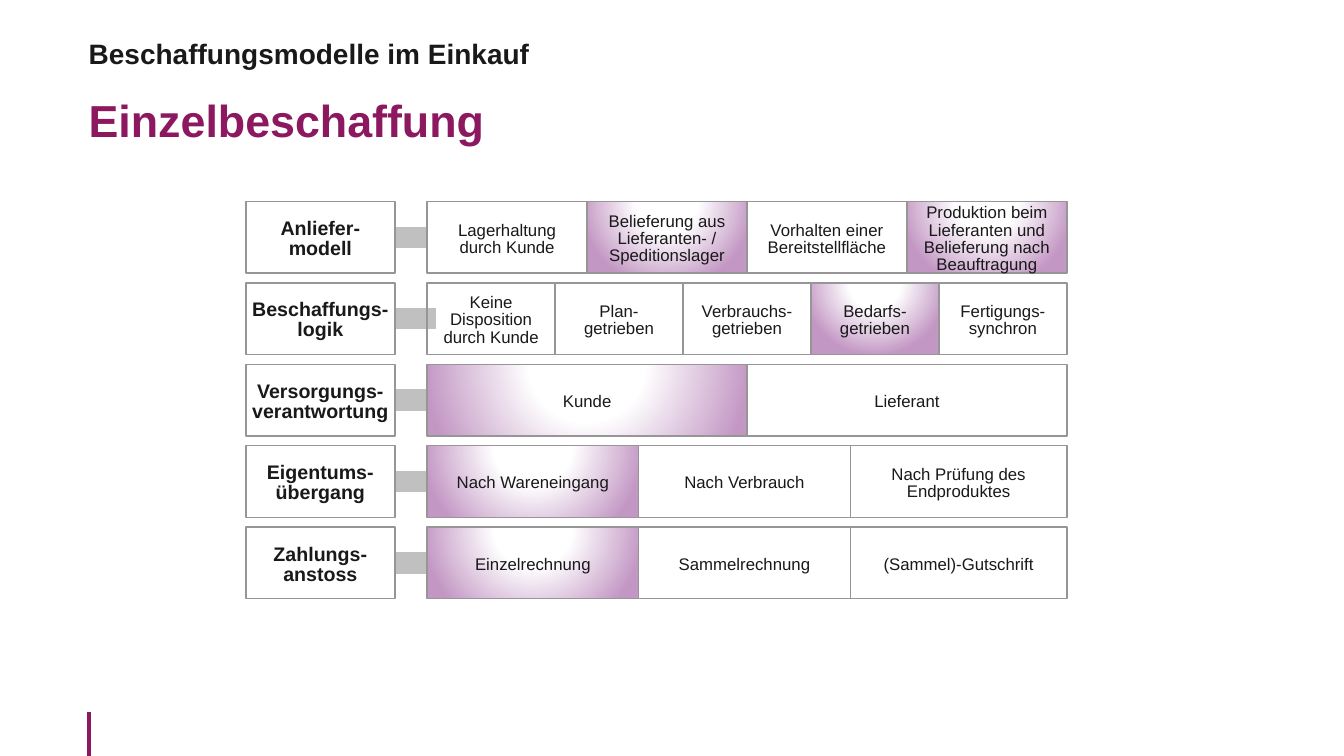
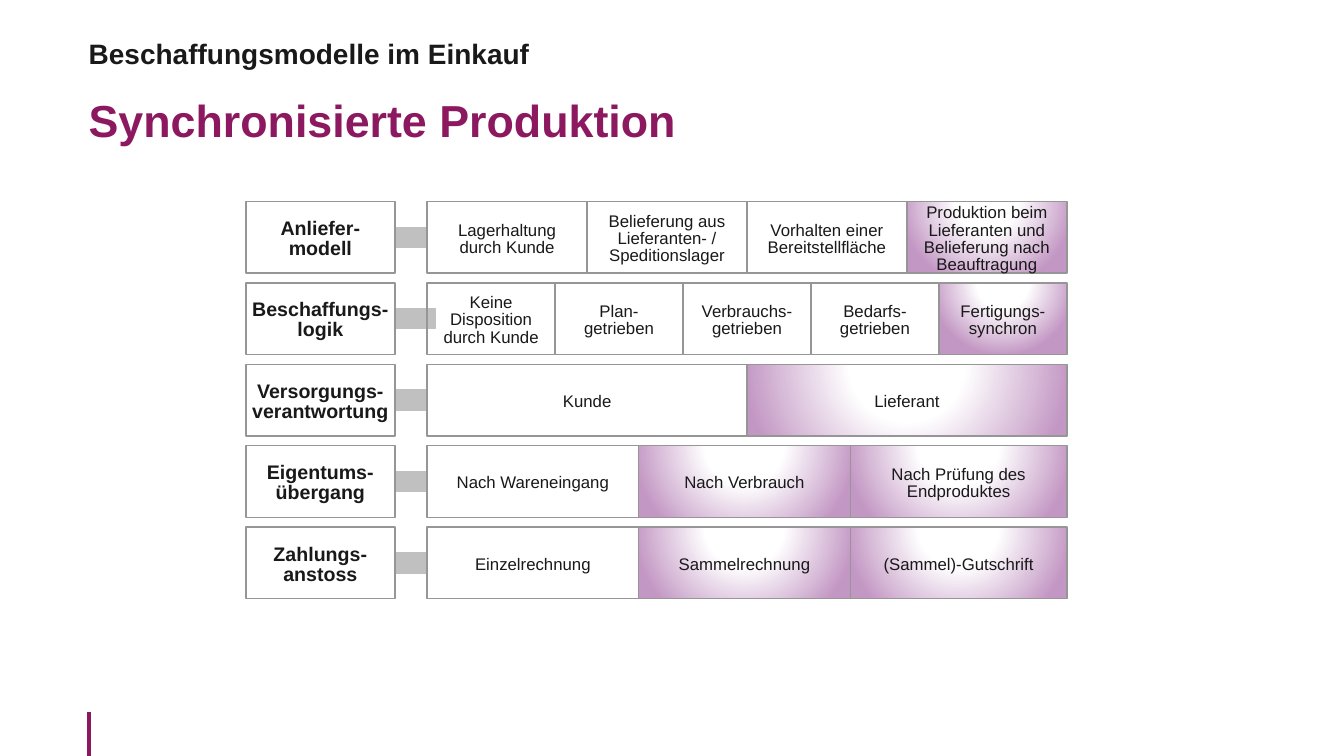
from lxml.etree import SubElement
from pptx import Presentation
from pptx.dml.color import RGBColor
from pptx.enum.shapes import MSO_CONNECTOR, MSO_SHAPE
from pptx.enum.text import MSO_ANCHOR, PP_ALIGN
from pptx.oxml import parse_xml
from pptx.oxml.ns import nsdecls, qn
from pptx.util import Inches, Pt

# Shared look
PLUM = RGBColor(0x8C, 0x19, 0x5F)
LILAC = RGBColor(0xC3, 0x97, 0xC4)
INK = RGBColor(0x19, 0x19, 0x19)
EDGE = RGBColor(0x96, 0x96, 0x96)
SILVER = RGBColor(0xC0, 0xC0, 0xC0)
WHITE = RGBColor(0xFF, 0xFF, 0xFF)
FONT = "Arial"
TOPIC = "Beschaffungsmodelle im Einkauf"

# Grid of the matrix, in inches
TOP, LAST, HIGH = 2, 5.23, 0.71
LABEL_X, LABEL_W = 2.44, 1.48
PIPE_X, PIPE_W, PIPE_H = 3.86, 0.46, 0.2
LEFT, RIGHT = 4.24, 10.59

# Row label, cell pitch, cell texts (\v breaks a line)
ROWS = [
    ("Anliefer-\vmodell", (RIGHT - LEFT) / 4,
     ["Lagerhaltung\vdurch Kunde",
      "Belieferung aus\vLieferanten- /\vSpeditionslager",
      "Vorhalten einer\vBereitstellfläche",
      "Produktion beim Lieferanten und Belieferung nach Beauftragung"]),
    ("Beschaffungs-\vlogik", (RIGHT - LEFT) / 5,
     ["Keine Disposition durch Kunde", "Plan-\vgetrieben",
      "Verbrauchs-getrieben", "Bedarfs-getrieben", "Fertigungs-synchron"]),
    ("Versorgungs-\vverantwortung", (RIGHT - LEFT) / 2,
     ["Kunde", "Lieferant"]),
    ("Eigentums-\vübergang", 2.1,
     ["Nach Wareneingang", "Nach Verbrauch",
      "Nach Prüfung des Endproduktes"]),
    ("Zahlungs-\vanstoss", 2.1,
     ["Einzelrechnung", "Sammelrechnung", "(Sammel)-Gutschrift"]),
]
PITCH = (LAST - TOP) / (len(ROWS) - 1)
CLEAR = (1, 0)  # the cell through which its pipe shows

# Slide title and the cells marked in each row
SLIDES = [
    ("Einzelbeschaffung", [{1, 3}, {3}, {0}, {0}, {0}]),
    ("Synchronisierte Produktion", [{3}, {4}, {1}, {1, 2}, {1, 2}]),
]


def style(para, size, color, bold=False):
    font = para.font
    font.name, font.size, font.bold = FONT, Pt(size), bold
    font.color.rgb = color


def inset(frame, side, top, base):
    frame.margin_left = frame.margin_right = Inches(side)
    frame.margin_top, frame.margin_bottom = Inches(top), Inches(base)
    frame.vertical_anchor = MSO_ANCHOR.MIDDLE


def heading(slide, text, top, height, size, color, spacing=1.0):
    box = slide.shapes.add_textbox(
        Inches(0.88), Inches(top), Inches(12.09), Inches(height))
    frame = box.text_frame
    frame.word_wrap = True
    inset(frame, 0, 0, 0)
    para = frame.paragraphs[0]
    para.text = text
    para.line_spacing = spacing
    style(para, size, color, True)


def rect(slide, x, y, width, height, fill, edge):
    shape = slide.shapes.add_shape(
        MSO_SHAPE.RECTANGLE, Inches(x), Inches(y), Inches(width), Inches(height))
    shape.shadow.inherit = False
    if fill is None:
        shape.fill.background()
    else:
        shape.fill.solid()
        shape.fill.fore_color.rgb = fill
    shape.line.color.rgb = edge
    shape.line.width = Pt(1)
    return shape


def box(slide, x, y, width, text, size, side, fill=WHITE, bold=False, wrap=True):
    shape = rect(slide, x, y, width, HIGH, fill, EDGE)
    frame = shape.text_frame
    frame.word_wrap = wrap
    inset(frame, side, 0.09, 0.05)
    para = frame.paragraphs[0]
    para.text = text
    para.alignment = PP_ALIGN.CENTER
    para.line_spacing = 0.85
    style(para, size, INK, bold)
    return shape


def glow(shape):
    """Fill with a round gradient centred above the shape."""
    stops = "".join(
        f'<a:gs pos="{pos}"><a:srgbClr val="{color}"/></a:gs>'
        for pos, color in [(0, WHITE), (35000, WHITE), (100000, LILAC)])
    grad = parse_xml(
        f'<a:gradFill {nsdecls("a")} rotWithShape="1"><a:gsLst>{stops}</a:gsLst>'
        '<a:path path="circle"><a:fillToRect l="50000" t="-80000" r="50000"'
        ' b="180000"/></a:path></a:gradFill>')
    props = shape.element.spPr
    props.replace(props.find(qn("a:solidFill")), grad)


def frame_up(slide, title):
    """Headings and the footer rule."""
    heading(slide, TOPIC, 0.37, 0.31, 20, INK)
    heading(slide, title, 0.76, 0.75, 32, PLUM, 1.2)
    rule = slide.shapes.add_connector(
        MSO_CONNECTOR.STRAIGHT, Inches(0.88), Inches(7.06), Inches(0.88), Inches(7.5))
    rule.line.color.rgb = PLUM
    rule.line.width = Pt(3)
    SubElement(rule.element.spPr, qn("a:effectLst"))


def matrix(slide, marks):
    for row, (label, step, cells) in enumerate(ROWS):
        y = TOP + row * PITCH
        rect(slide, PIPE_X, y + (HIGH - PIPE_H) / 2, PIPE_W, PIPE_H, SILVER, SILVER)
        box(slide, LABEL_X, y, LABEL_W, label, 14, 0.1, bold=True, wrap=False)
        for col, text in enumerate(cells):
            x = LEFT + col * step
            # The last cell takes up what is left of the row
            width = RIGHT - x if col == len(cells) - 1 else step
            fill = None if (row, col) == CLEAR else WHITE
            cell = box(slide, x, y, width, text, 12, 0.04, fill)
            if col in marks[row]:
                glow(cell)


def main():
    deck = Presentation()
    deck.slide_width, deck.slide_height = Inches(13.34), Inches(7.5)
    for title, marks in SLIDES:
        slide = deck.slides.add_slide(deck.slide_layouts[6])
        frame_up(slide, title)
        matrix(slide, marks)
    deck.save("out.pptx")


if __name__ == "__main__":
    main()
